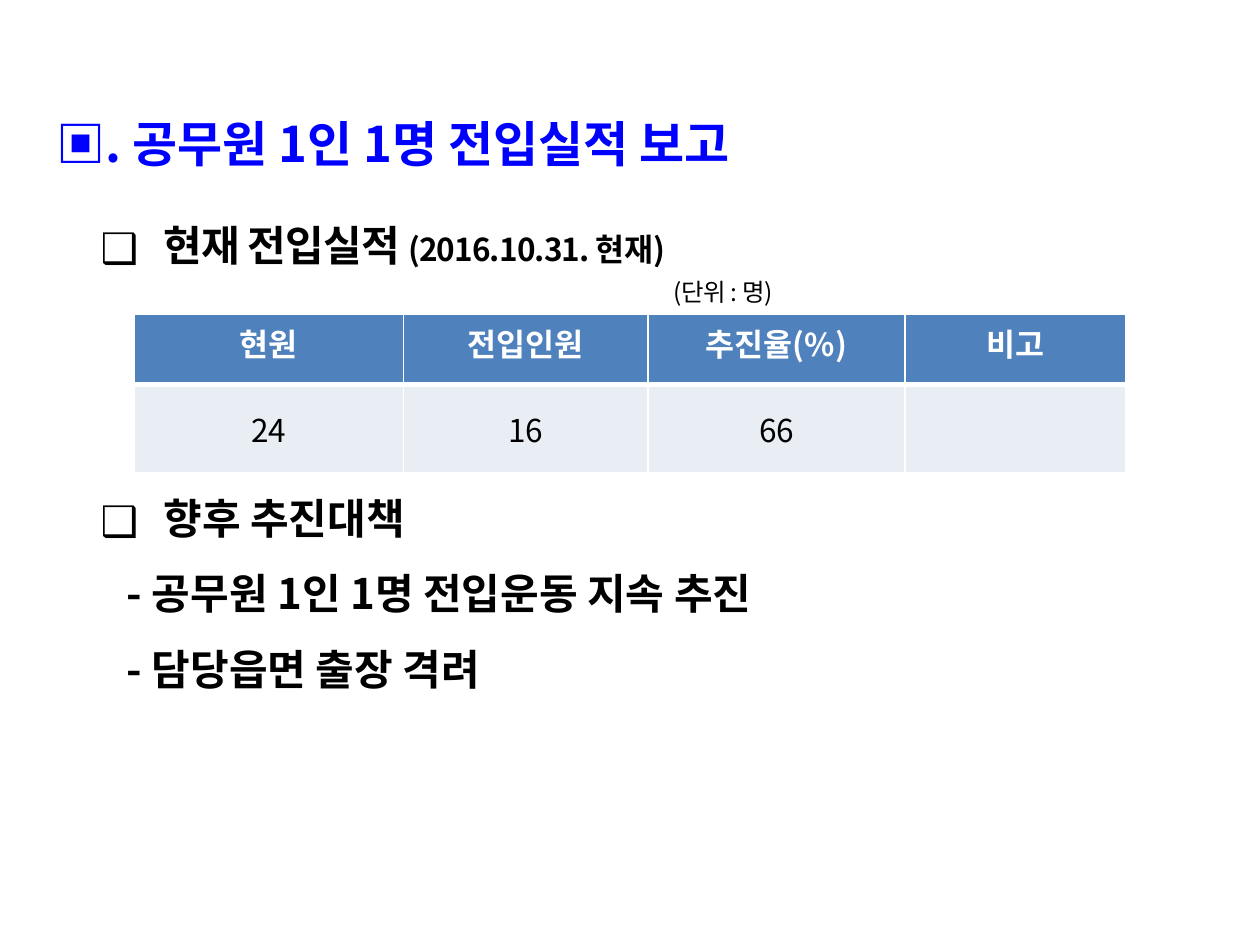
from dataclasses import dataclass

from lxml import etree
from pptx import Presentation
from pptx.dml.color import RGBColor
from pptx.enum import text
from pptx.oxml import ns
from pptx.util import Pt


@dataclass(frozen=True)
class Theme:
    font: str = "Noto Sans CJK KR"
    title: str = "0000FF"
    ink: str = "000000"
    white: str = "FFFFFF"
    header: str = "4F81BD"
    body: str = "E9EDF4"
    title_size: int = 28
    heading_size: int = 24
    cell_size: int = 18
    unit_size: int = 14


class ReportSlide:
    def __init__(self, deck, theme):
        self.theme = theme
        self.slide = deck.slides.add_slide(deck.slide_layouts[6])

    def run(self, paragraph, words, size, color, bold=True, spacing=0):
        run = paragraph.add_run()
        run.text = words
        formats = {"name": self.theme.font, "size": Pt(size), "bold": bold}
        for name, value in formats.items():
            setattr(run.font, name, value)
        run.font.color.rgb = RGBColor.from_string(color)
        props = run.font._element
        props.set("spc", str(round(spacing * 100)))
        etree.SubElement(props, ns.qn("a:ea"), typeface=self.theme.font)

    def outline(self, left, top, width, height, lines):
        """Set each line as one paragraph with an exact line height."""
        frame = self.slide.shapes.add_textbox(
            Pt(left), Pt(top), Pt(width), Pt(height)).text_frame
        frame.word_wrap = True
        for i, line in enumerate(lines):
            paragraph = frame.add_paragraph() if i else frame.paragraphs[0]
            paragraph.line_spacing = Pt(line["height"])
            paragraph.space_before = Pt(line.get("before", 0))
            self.indent(paragraph, line["margin"], line.get("bullet"))
            for run in line["runs"]:
                self.run(paragraph, **run)

    def indent(self, paragraph, margin, bullet):
        props = paragraph._p.get_or_add_pPr()
        props.set("marL", str(Pt(margin)))
        props.set("indent", str(Pt(-36 if bullet else 0)))
        if bullet:
            color = etree.SubElement(props, ns.qn("a:buClr"))
            etree.SubElement(color, ns.qn("a:srgbClr"), val=self.theme.ink)
            etree.SubElement(props, ns.qn("a:buFont"), typeface=self.theme.font)
            etree.SubElement(props, ns.qn("a:buChar"), char=bullet)

    def table(self, left, top, widths, heights, rows):
        """Draw a header row over body rows, parted by a thick rule."""
        t = self.theme
        grid = self.slide.shapes.add_table(
            len(rows), len(widths), Pt(left), Pt(top),
            Pt(sum(widths)), Pt(sum(heights))).table
        for column, width in zip(grid.columns, widths):
            column.width = Pt(width)
        for r, (row, height) in enumerate(zip(rows, heights)):
            grid.rows[r].height = Pt(height)
            is_header = r == 0
            for c, words in enumerate(row):
                cell = grid.cell(r, c)
                cell.vertical_anchor = (text.MSO_ANCHOR.TOP if is_header
                                        else text.MSO_ANCHOR.MIDDLE)
                paragraph = cell.text_frame.paragraphs[0]
                paragraph.alignment = text.PP_ALIGN.CENTER
                if words:
                    self.run(paragraph, words, t.cell_size,
                             t.white if is_header else t.ink, is_header)
                self.borders(cell, {"lnL": 1, "lnR": 1,
                                    "lnT": 1 if is_header else 3,
                                    "lnB": 3 if is_header else 1})
                cell.fill.solid()
                cell.fill.fore_color.rgb = RGBColor.from_string(
                    t.header if is_header else t.body)

    def borders(self, cell, widths):
        props = cell._tc.get_or_add_tcPr()
        for side, width in widths.items():
            line = etree.SubElement(props, ns.qn(f"a:{side}"), w=str(Pt(width)))
            fill = etree.SubElement(line, ns.qn("a:solidFill"))
            etree.SubElement(fill, ns.qn("a:srgbClr"), val=self.theme.white)


def main():
    theme = Theme()
    deck = Presentation()
    deck.slide_width, deck.slide_height = Pt(720), Pt(540)
    report = ReportSlide(deck, theme)

    heading = {"size": theme.heading_size, "color": theme.ink}
    section = {"height": 43, "margin": 72, "bullet": "❑"}
    action = {"height": 43, "margin": 51}
    report.outline(14.4, 31.7, 705.6, 459.4, [
        {"height": 63, "margin": 10.6, "runs": [
            {"words": "▣. 공무원 1인 1명 전입실적 보고",
             "size": theme.title_size, "color": theme.title}]},
        {**section, "before": 13, "runs": [
            {**heading, "words": "현재 전입실적 ", "spacing": -0.5},
            {**heading, "words": "(2016.10.31. 현재)",
             "size": theme.cell_size, "spacing": -0.5}]},
        {"height": 21, "margin": 363.5, "runs": [
            {**heading, "words": "(단위 : 명)", "size": theme.unit_size,
             "bold": False, "spacing": -0.5}]},
        {**section, "before": 92, "runs": [{**heading, "words": "향후 추진대책"}]},
        *({**action, "runs": [{**heading, "words": f"- {plan}"}]}
          for plan in ("공무원 1인 1명 전입운동 지속 추진", "담당읍면 출장 격려")),
    ])
    report.table(76.5, 179.3, [154, 139.8, 146.9, 126], [40.3, 50.4], [
        ["현원", "전입인원", "추진율(%)", "비고"],
        ["24", "16", "66", ""],
    ])
    deck.save("out.pptx")


if __name__ == "__main__":
    main()
